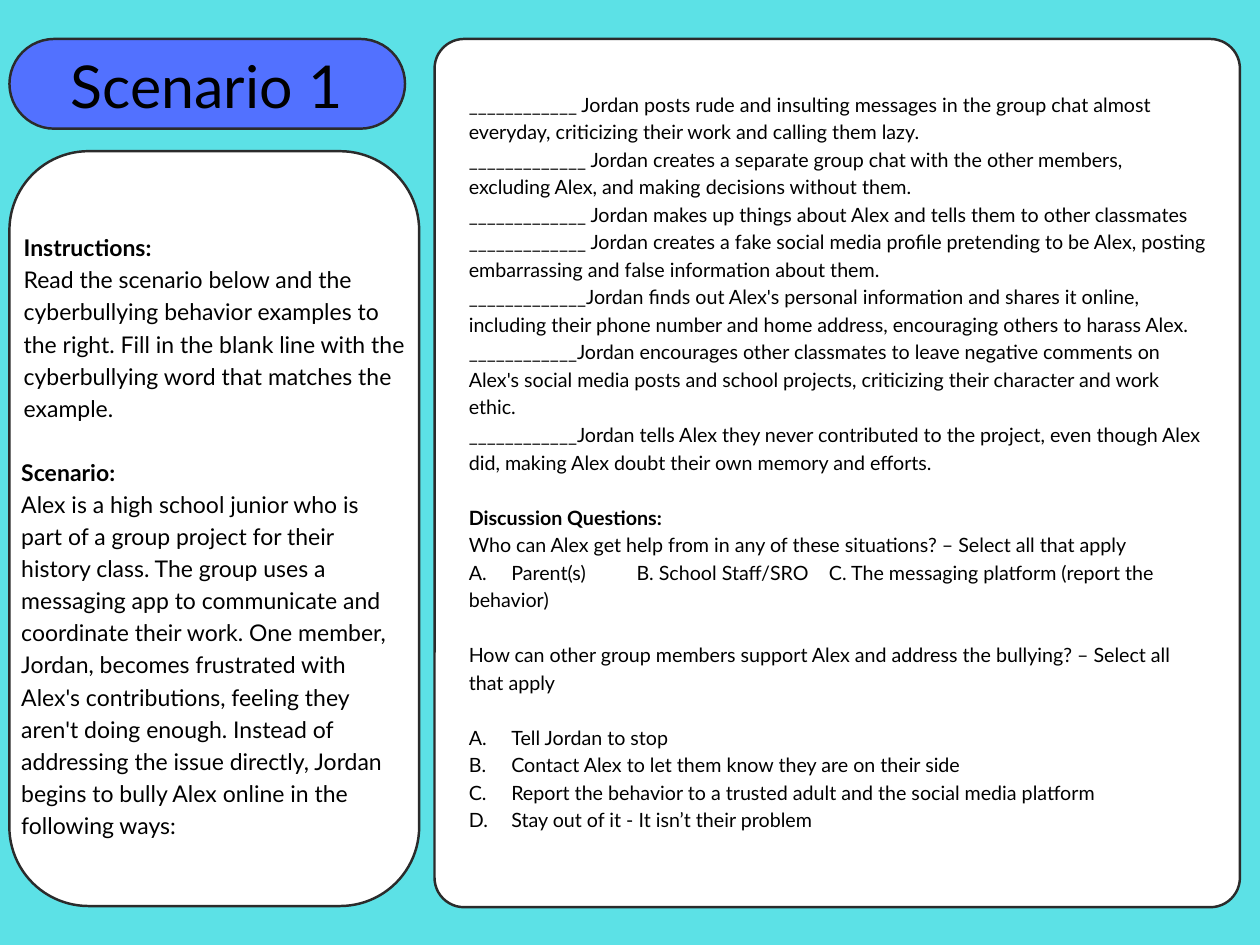
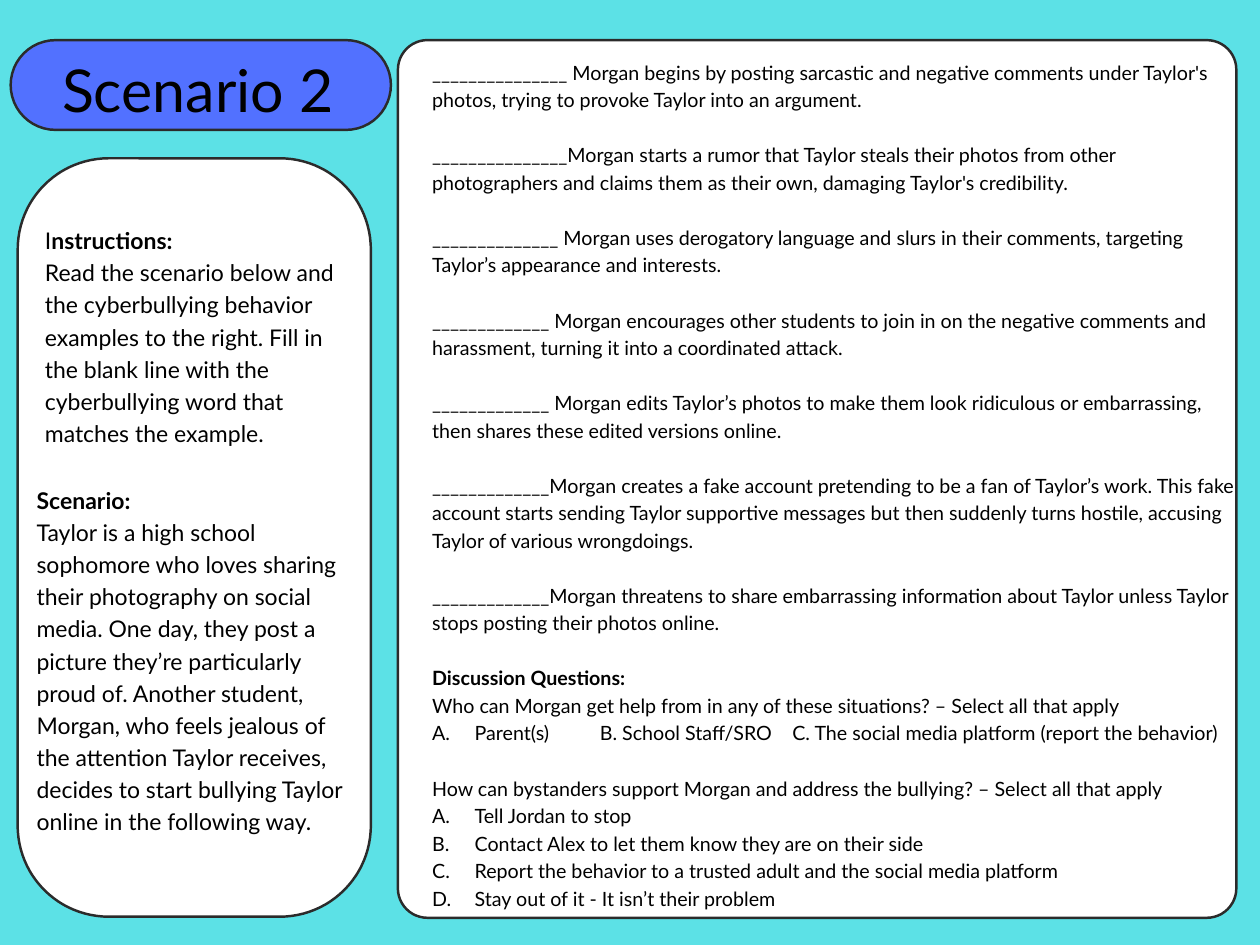
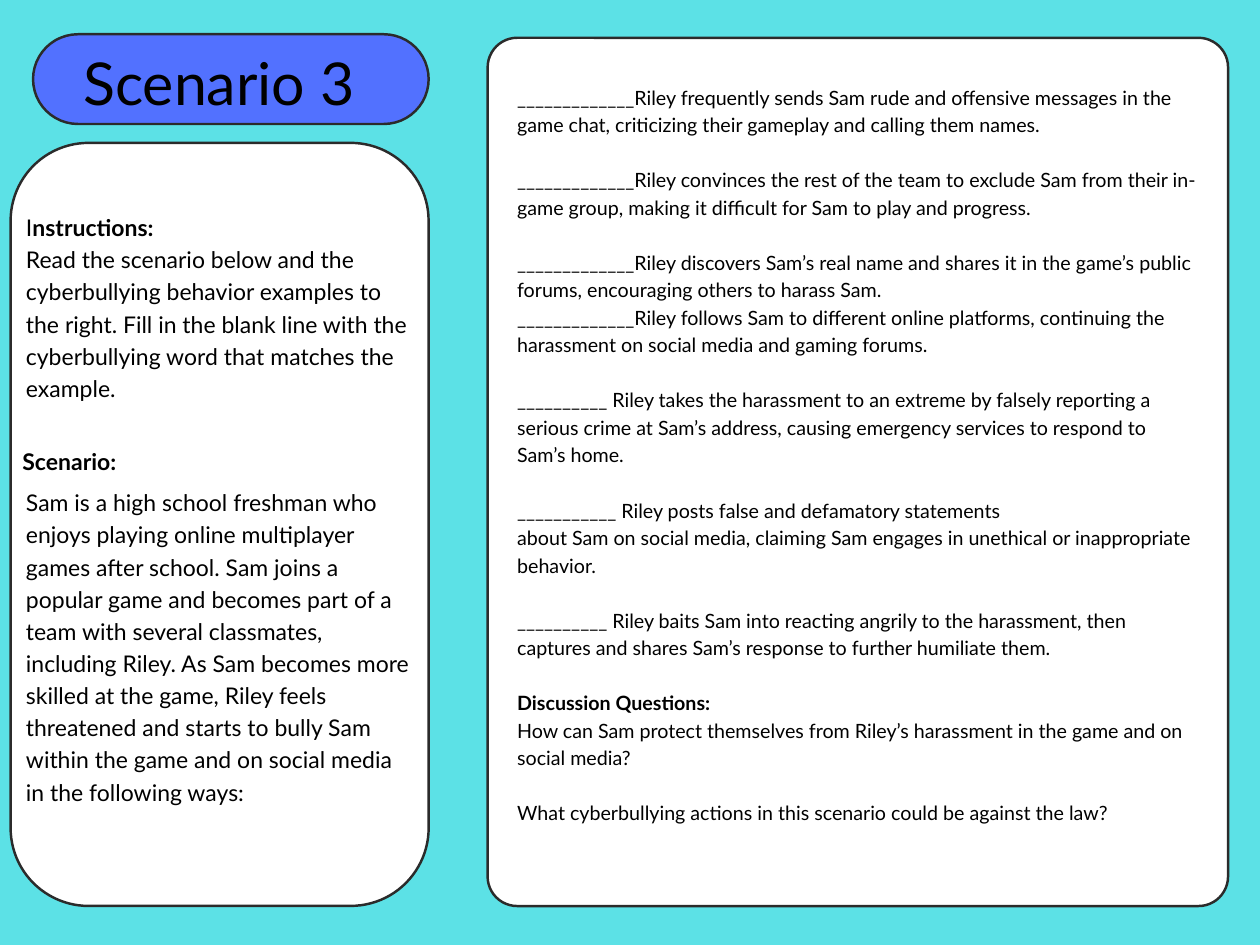
from lxml.etree import SubElement
from pptx import Presentation
from pptx.dml.color import RGBColor
from pptx.enum.shapes import MSO_SHAPE
from pptx.enum.text import PP_ALIGN
from pptx.oxml.ns import qn
from pptx.util import Inches, Pt

AQUA = RGBColor(0x5C, 0xE1, 0xE6)
BLUE = RGBColor(0x52, 0x71, 0xFF)
WHITE = RGBColor(0xFF, 0xFF, 0xFF)
BLACK = RGBColor(0x00, 0x00, 0x00)
OUTLINE = RGBColor(0x2B, 0x2B, 0x2B)
FONT = "Lato"
TITLE_SIZE, SIDE_SIZE, EXAMPLE_SIZE = 36, 14, 12
LINE_RATIO = 1.4
ANSWER_TABS = (0.36, 1.42, 3.05)

# Text is a list of blocks, set one line apart; a block is a list of paragraphs.
# Words between asterisks are bold.
TASK = (
    "Read the scenario below and the cyberbullying behavior examples to the right. "
    "Fill in the blank line with the cyberbullying word that matches the example."
)
DISCUSSION = "*Discussion Questions:*"
SUPPORT_ANSWERS = [
    "A.\tTell Jordan to stop",
    "B.\tContact Alex to let them know they are on their side",
    "C.\tReport the behavior to a trusted adult and the social media platform",
    "D.\tStay out of it - It isn’t their problem",
]


def help_answers(platform):
    return f"A.\tParent(s)\tB. School Staff/SRO\tC. The {platform} platform (report the behavior)"


# Boxes are (left, top, width, height) in inches.
SCENARIOS = [
    {
        "title": "Scenario 1",
        "title_pill": (0.08, 0.33, 3.35, 0.76),
        "title_box": (0.44, 0.32, 2.62, 0.68),
        "side_panel": (0.08, 1.28, 3.47, 6.39),
        "side_radius": 0.67,
        "example_panel": (3.68, 0.33, 6.82, 7.35),
        "side_texts": [
            ((0.2, 1.94, 3.25, 1.62), ["*Instructions:*", TASK]),
            ((0.18, 3.84, 3.25, 3.06), [
                "*Scenario:*",
                "Alex is a high school junior who is part of a group project for their history "
                "class. The group uses a messaging app to communicate and coordinate their work. "
                "One member, Jordan, becomes frustrated with Alex's contributions, feeling they "
                "aren't doing enough. Instead of addressing the issue directly, Jordan begins to "
                "bully Alex online in the following ways:",
            ]),
        ],
        "example_box": (3.97, 0.75, 6.25, 6.63),
        "examples": [
            [
                "____________ Jordan posts rude and insulting messages in the group chat almost "
                "everyday, criticizing their work and calling them lazy.",
                "_____________ Jordan creates a separate group chat with the other members, "
                "excluding Alex, and making decisions without them.",
                "_____________ Jordan makes up things about Alex and tells them to other classmates",
                "_____________ Jordan creates a fake social media profile pretending to be Alex, "
                "posting embarrassing and false information about them.",
                "_____________Jordan finds out Alex's personal information and shares it online, "
                "including their phone number and home address, encouraging others to harass Alex.",
                "____________Jordan encourages other classmates to leave negative comments on "
                "Alex's social media posts and school projects, criticizing their character and "
                "work ethic.",
                "____________Jordan tells Alex they never contributed to the project, even though "
                "Alex did, making Alex doubt their own memory and efforts.",
            ],
            [
                DISCUSSION,
                "Who can Alex get help from in any of these situations? – Select all that apply",
                help_answers("messaging"),
            ],
            ["How can other group members support Alex and address the bullying? "
             "– Select all that apply"],
            SUPPORT_ANSWERS,
        ],
    },
    {
        "title": "Scenario 2",
        "title_pill": (0.09, 0.34, 3.22, 0.76),
        "title_box": (-0.1, 0.35, 3.55, 0.67),
        "side_panel": (0.15, 1.34, 2.99, 6.42),
        "side_radius": 0.77,
        "example_panel": (3.37, 0.34, 7.1, 7.43),
        "side_texts": [
            ((0.38, 1.88, 2.58, 1.89), ["I*nstructions:*", TASK]),
            ((0.31, 4.08, 2.74, 3.24), [
                "*Scenario:*",
                "Taylor is a high school sophomore who loves sharing their photography on social "
                "media. One day, they post a picture they’re particularly proud of. Another "
                "student, Morgan, who feels jealous of the attention Taylor receives, decides to "
                "start bullying Taylor online in the following way.",
            ]),
        ],
        "example_box": (3.66, 0.48, 6.81, 7.5),
        "examples": [
            ["_______________ Morgan begins by posting sarcastic and negative comments under "
             "Taylor's photos, trying to provoke Taylor into an argument."],
            ["_______________Morgan starts a rumor that Taylor steals their photos from other "
             "photographers and claims them as their own, damaging Taylor's credibility."],
            ["______________ Morgan uses derogatory language and slurs in their comments, "
             "targeting Taylor’s appearance and interests."],
            ["_____________ Morgan encourages other students to join in on the negative comments "
             "and harassment, turning it into a coordinated attack."],
            ["_____________ Morgan edits Taylor’s photos to make them look ridiculous or "
             "embarrassing, then shares these edited versions online."],
            ["_____________Morgan creates a fake account pretending to be a fan of Taylor’s work. "
             "This fake account starts sending Taylor supportive messages but then suddenly turns "
             "hostile, accusing Taylor of various wrongdoings."],
            ["_____________Morgan threatens to share embarrassing information about Taylor unless "
             "Taylor stops posting their photos online."],
            [
                DISCUSSION,
                "Who can Morgan get help from in any of these situations? – Select all that apply",
                help_answers("social media"),
            ],
            ["How can bystanders support Morgan and address the bullying? – Select all that apply",
             *SUPPORT_ANSWERS],
        ],
    },
    {
        "title": "Scenario 3",
        "title_pill": (0.28, 0.29, 3.35, 0.76),
        "title_box": (-0.59, 0.29, 4.89, 0.67),
        "side_panel": (0.09, 1.21, 3.54, 6.46),
        "side_radius": 0.66,
        "example_panel": (4.13, 0.32, 6.27, 7.35),
        "side_texts": [
            ((0.22, 1.77, 3.27, 1.62), ["I*nstructions:*", TASK]),
            ((0.19, 3.75, 0.87, 0.26), ["*Scenario:*"]),
            ((0.22, 4.1, 3.27, 2.78), [
                "Sam is a high school freshman who enjoys playing online multiplayer games after "
                "school. Sam joins a popular game and becomes part of a team with several "
                "classmates, including Riley. As Sam becomes more skilled at the game, Riley feels "
                "threatened and starts to bully Sam within the game and on social media in the "
                "following ways:",
            ]),
        ],
        "example_box": (4.38, 0.69, 5.77, 6.63),
        "examples": [
            ["_____________Riley frequently sends Sam rude and offensive messages in the game "
             "chat, criticizing their gameplay and calling them names."],
            ["_____________Riley convinces the rest of the team to exclude Sam from their in-game "
             "group, making it difficult for Sam to play and progress."],
            [
                "_____________Riley discovers Sam’s real name and shares it in the game’s public "
                "forums, encouraging others to harass Sam.",
                "_____________Riley follows Sam to different online platforms, continuing the "
                "harassment on social media and gaming forums.",
            ],
            ["__________ Riley takes the harassment to an extreme by falsely reporting a serious "
             "crime at Sam’s address, causing emergency services to respond to Sam’s home."],
            [
                "___________ Riley posts false and defamatory statements",
                "about Sam on social media, claiming Sam engages in unethical or inappropriate "
                "behavior.",
            ],
            ["__________ Riley baits Sam into reacting angrily to the harassment, then captures "
             "and shares Sam’s response to further humiliate them."],
            [
                DISCUSSION,
                "How can Sam protect themselves from Riley’s harassment in the game and on social "
                "media?",
            ],
            ["What cyberbullying actions in this scenario could be against the law?"],
        ],
    },
]
PANEL_RADIUS = 0.25


def add_panel(slide, box, radius, fill=WHITE):
    panel = slide.shapes.add_shape(MSO_SHAPE.ROUNDED_RECTANGLE, *map(Inches, box))
    panel.adjustments[0] = min(0.5, radius / min(box[2:]))
    panel.shadow.inherit = False
    panel.fill.solid()
    panel.fill.fore_color.rgb = fill
    panel.line.color.rgb = OUTLINE
    panel.line.width = Pt(1.5)


def add_tab_stops(paragraph):
    tab_list = SubElement(paragraph._p.get_or_add_pPr(), qn("a:tabLst"))
    for position in ANSWER_TABS:
        SubElement(tab_list, qn("a:tab"), pos=str(Inches(position)), algn="l")


def add_text(slide, box, blocks, size, align=PP_ALIGN.LEFT):
    frame = slide.shapes.add_textbox(*map(Inches, box)).text_frame
    frame.word_wrap = True
    frame.margin_left = frame.margin_right = frame.margin_top = frame.margin_bottom = 0
    line_height = Pt(size * LINE_RATIO)
    for block_number, block in enumerate(blocks):
        for line_number, text in enumerate(block):
            is_first = block_number == line_number == 0
            paragraph = frame.paragraphs[0] if is_first else frame.add_paragraph()
            paragraph.alignment = align
            paragraph.line_spacing = line_height
            if block_number and line_number == 0:
                paragraph.space_before = line_height
            if "\t" in text:
                add_tab_stops(paragraph)
            for part_number, part in enumerate(text.split("*")):
                if part:
                    run = paragraph.add_run()
                    run.text = part
                    run.font.name = FONT
                    run.font.size = Pt(size)
                    run.font.color.rgb = BLACK
                    run.font.bold = part_number % 2 == 1


def add_scenario(presentation, scenario):
    slide = presentation.slides.add_slide(presentation.slide_layouts[6])
    slide.background.fill.solid()
    slide.background.fill.fore_color.rgb = AQUA
    pill = scenario["title_pill"]
    add_panel(slide, pill, pill[3] / 2, fill=BLUE)
    add_panel(slide, scenario["side_panel"], scenario["side_radius"])
    add_panel(slide, scenario["example_panel"], PANEL_RADIUS)
    add_text(slide, scenario["title_box"], [[scenario["title"]]], TITLE_SIZE, align=PP_ALIGN.CENTER)
    for box, block in scenario["side_texts"]:
        add_text(slide, box, [block], SIDE_SIZE)
    add_text(slide, scenario["example_box"], scenario["examples"], EXAMPLE_SIZE)


def main():
    presentation = Presentation()
    presentation.slide_width = Inches(10.67)
    presentation.slide_height = Inches(8)
    for scenario in SCENARIOS:
        add_scenario(presentation, scenario)
    presentation.save("out.pptx")


if __name__ == "__main__":
    main()
